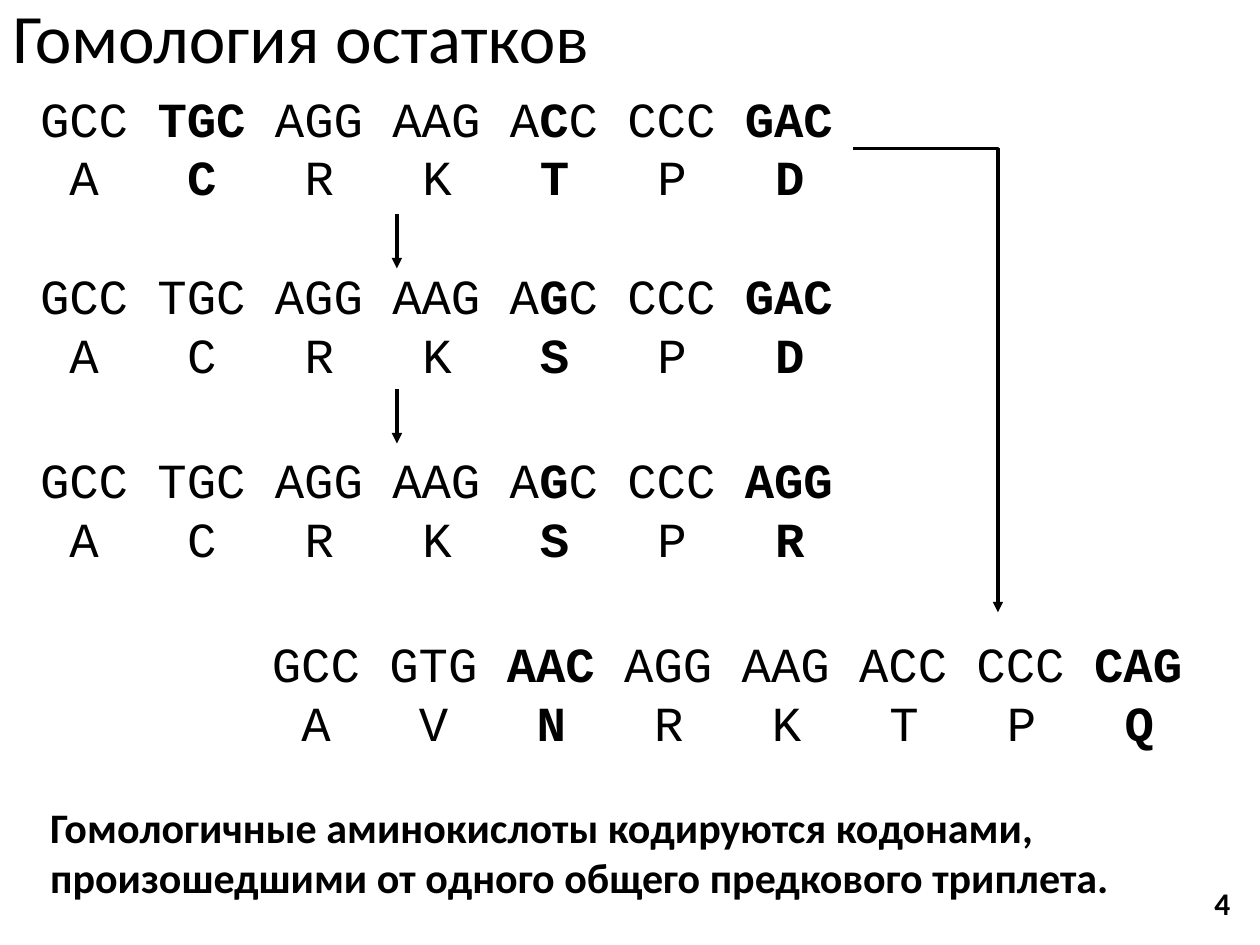
from dataclasses import dataclass

from lxml.etree import SubElement as Sub
from pptx import Presentation
from pptx.dml.color import RGBColor
from pptx.enum.shapes import MSO_CONNECTOR as Link
from pptx.enum.text import MSO_ANCHOR as Anchor, MSO_AUTO_SIZE as Fit, PP_ALIGN as Align
from pptx.oxml.ns import qn
from pptx.util import Inches, Pt

BLACK = RGBColor(0, 0, 0)
SANS, MONO = "Calibri", "Courier New"
SIZE = 28
CHAR = 0.6 * SIZE / 72  # width of one monospaced letter, inches
STEP = 4 * CHAR         # three letters and a space


@dataclass
class Gene:
    """Codons with their residues; asterisks enclose the bold letters."""
    left: float
    top: float
    codons: str
    acids: str


@dataclass
class Arrow:
    x1: float
    y1: float
    x2: float
    y2: float


GENES = [
    Gene(0.22, 0.65, "GCC *TGC* AGG AAG A*C*C CCC *GAC*", "A *C* R K *T* P *D*"),
    Gene(0.22, 2.06, "GCC TGC AGG AAG A*G*C CCC *GAC*", "A C R K *S* P *D*"),
    Gene(0.22, 3.52, "GCC TGC AGG AAG A*G*C CCC *AGG*", "A C R K *S* P *R*"),
    Gene(2.06, 4.98, "GCC GTG *AAC* AGG AAG ACC CCC *CAG*", "A V *N* R K T P *Q*"),
]
ARROWS = [
    Arrow(3.15, 1.7, 3.15, 2.13),
    Arrow(3.15, 3.09, 3.15, 3.52),
    Arrow(6.77, 1.18, 7.92, 4.86),
]


def style(par, face: str, size: float, bold: bool | None = None) -> None:
    font = par.font
    font.name, font.size, font.bold = face, Pt(size), bold
    font.color.rgb = BLACK


def add_box(slide, left: float, top: float, width: float, height: float):
    box = slide.shapes.add_textbox(*map(Inches, (left, top, width, height)))
    box.text_frame.word_wrap = True
    return box.text_frame


def add_note(slide, text: str, *place: float, size: float) -> None:
    par = add_box(slide, *place).paragraphs[0]
    par.text = text
    style(par, SANS, size, True)


def add_runs(par, text: str) -> None:
    for i, part in enumerate(text.split("*")):
        if part:
            run = par.add_run()
            run.text = part
            run.font.bold = i % 2 == 1


def add_tabs(par, count: int) -> None:
    """Centre one tab stop under each codon."""
    tabs = Sub(par._p.get_or_add_pPr(), qn("a:tabLst"))
    for i in range(count):
        pos = Inches(1.5 * CHAR + i * STEP)
        Sub(tabs, qn("a:tab"), pos=str(pos), algn="ctr")


def add_gene(slide, gene: Gene) -> None:
    acids = gene.acids.split()
    frame = add_box(slide, gene.left, gene.top, len(acids) * STEP + 0.01, 1.04)
    top, low = frame.paragraphs[0], frame.add_paragraph()
    add_tabs(low, len(acids))
    add_runs(top, gene.codons)
    add_runs(low, "".join("\t" + acid for acid in acids))
    for par in (top, low):
        style(par, MONO, SIZE)


def add_arrow(slide, arrow: Arrow) -> None:
    bent = arrow.x1 != arrow.x2
    ends = map(Inches, (arrow.x1, arrow.y1, arrow.x2, arrow.y2))
    link = slide.shapes.add_connector(Link.ELBOW if bent else Link.STRAIGHT, *ends)
    link.line.color.rgb = BLACK
    link.line.width = Pt(2)
    props = link._element.spPr
    if bent:  # a single corner: across, then down
        props.find(qn("a:prstGeom")).set("prst", "bentConnector2")
    Sub(link.line._get_or_add_ln(), qn("a:tailEnd"), type="triangle")
    Sub(props, qn("a:effectLst"))


def main() -> None:
    deck = Presentation()
    deck.slide_width, deck.slide_height = Inches(10), Inches(7.5)
    slide = deck.slides.add_slide(deck.slide_layouts[5])

    # Title
    title = slide.shapes.title
    title.left, title.top, title.width, title.height = map(Inches, (0, 0, 8.62, 0.65))
    frame = title.text_frame
    frame.text = "Гомология остатков"
    frame.auto_size, frame.vertical_anchor = Fit.NONE, Anchor.MIDDLE
    par = frame.paragraphs[0]
    par.alignment, par.line_spacing = Align.LEFT, 0.9
    style(par, SANS, 39.6)

    # Sequences and their descent
    for gene in GENES:
        add_gene(slide, gene)
    for arrow in ARROWS:
        add_arrow(slide, arrow)

    # Conclusion and page number
    add_note(slide, "Гомологичные аминокислоты кодируются кодонами, "
             "произошедшими от одного общего предкового триплета.",
             0.3, 6.31, 9.09, 0.91, size=24)
    add_note(slide, "4", 9.54, 6.97, 0.33, 0.4, size=18)

    deck.save("out.pptx")


if __name__ == "__main__":
    main()
